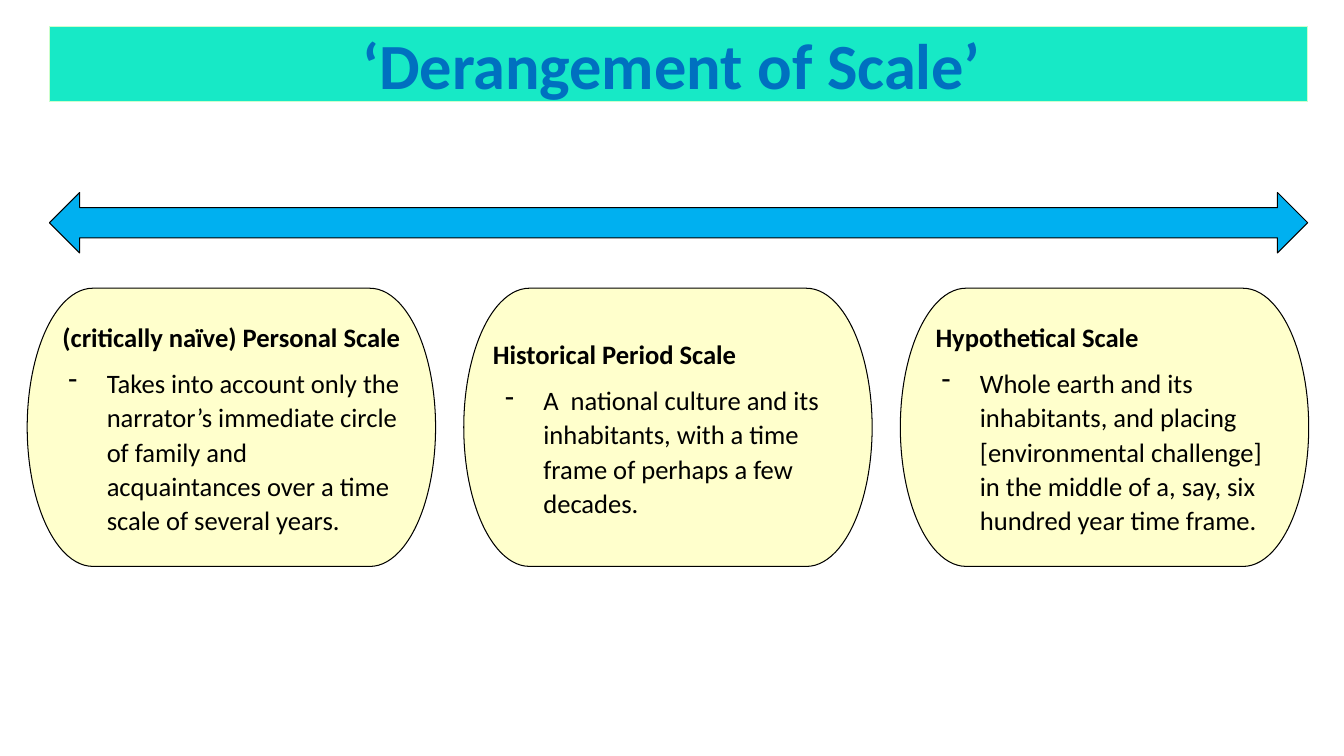
from lxml.etree import SubElement
from pptx import Presentation
from pptx.dml.color import RGBColor
from pptx.enum.shapes import MSO_SHAPE as Kind
from pptx.enum.text import MSO_ANCHOR as Anchor, PP_ALIGN as Align
from pptx.oxml.ns import qn
from pptx.util import Inches, Pt

COLORS = {"banner": "17E9C6", "edge": "CCFFCC", "title": "0070C0",
          "arrow": "00B0F0", "card": "FFFFCC", "ink": "000000"}

SCALES = [
    ("(critically naïve) Personal Scale", 0.06,
     "Takes into account only the narrator’s immediate circle of family "
     "and acquaintances over a time scale of several years."),
    ("Historical Period Scale", 0,
     "A  national culture and its inhabitants, with a time frame of "
     "perhaps a few decades."),
    ("Hypothetical Scale", 0.06,
     "Whole earth and its inhabitants, and placing [environmental "
     "challenge] in the middle of a, say, six hundred year time frame."),
]


def color(name):
    """Look up a named colour."""
    return RGBColor.from_string(COLORS[name])


def add_box(slide, kind, box, fill, line="ink"):
    """Draw a filled, outlined shape in the box."""
    shape = slide.shapes.add_shape(kind, *map(Inches, box))
    shape.shadow.inherit = False
    shape.fill.solid()
    shape.fill.fore_color.rgb = color(fill)
    shape.line.color.rgb = color(line)
    shape.line.width = Pt(0.75)
    return shape


def set_frame(shape, left, top, right, bottom):
    """Set wrapping, middle anchor and insets, and return the frame."""
    frame = shape.text_frame
    frame.word_wrap = True
    frame.vertical_anchor = Anchor.MIDDLE
    frame.margin_left, frame.margin_top = Inches(left), Inches(top)
    frame.margin_right, frame.margin_bottom = Inches(right), Inches(bottom)
    return frame


def set_font(para, size, ink, bold):
    """Set the font of a whole paragraph."""
    font = para.font
    font.name, font.size, font.bold = "Calibri", Pt(size), bold
    font.color.rgb = color(ink)


def set_indent(para, left, first=0):
    """Set the left margin and first-line indent in inches."""
    props = para._p.get_or_add_pPr()
    props.set("marL", str(Inches(left)))
    props.set("indent", str(Inches(first)))
    return props


def add_title(slide, box):
    """Draw the title banner."""
    shape = add_box(slide, Kind.RECTANGLE, box, "banner", "edge")
    para = set_frame(shape, 0.07, 0.04, 0.21, 0.04).paragraphs[0]
    para.text = "‘Derangement of Scale’"
    para.alignment = Align.CENTER
    set_font(para, 46, "title", True)


def add_card(slide, box, head, indent, body):
    """Draw one scale card with a heading and a dash item."""
    shape = add_box(slide, Kind.FLOWCHART_TERMINATOR, box, "card")
    frame = set_frame(shape, 0.1, 0.1, 0.1, 0.1)
    top, item = frame.paragraphs[0], frame.add_paragraph()
    top.text, item.text = head, body
    set_indent(top, indent)
    props = set_indent(item, 0.5, -0.38)
    tint = SubElement(props, qn("a:buClr"))
    SubElement(tint, qn("a:srgbClr"), val=COLORS["ink"])
    SubElement(props, qn("a:buChar"), char="-")
    item.space_before = Pt(8)
    for para, bold in ((top, True), (item, False)):
        para.alignment = Align.LEFT
        para.line_spacing = 1.08
        set_font(para, 19, "ink", bold)


def add_cards(slide, box, gap):
    """Lay the scale cards out in a row of equal widths."""
    left, top, width, height = box
    step = (width + gap) / len(SCALES)
    for i, scale in enumerate(SCALES):
        add_card(slide, (left + i * step, top, step - gap, height), *scale)


def main():
    """Build and save the slide."""
    deck = Presentation()
    deck.slide_width, deck.slide_height = Inches(13.33), Inches(7.5)
    slide = deck.slides.add_slide(deck.slide_layouts[6])
    add_title(slide, (0.49, 0.26, 12.48, 0.75))
    add_box(slide, Kind.LEFT_RIGHT_ARROW, (0.49, 1.91, 12.48, 0.6), "arrow")
    add_cards(slide, (0.27, 2.86, 12.71, 2.76), 0.28)
    deck.save("out.pptx")


if __name__ == "__main__":
    main()
